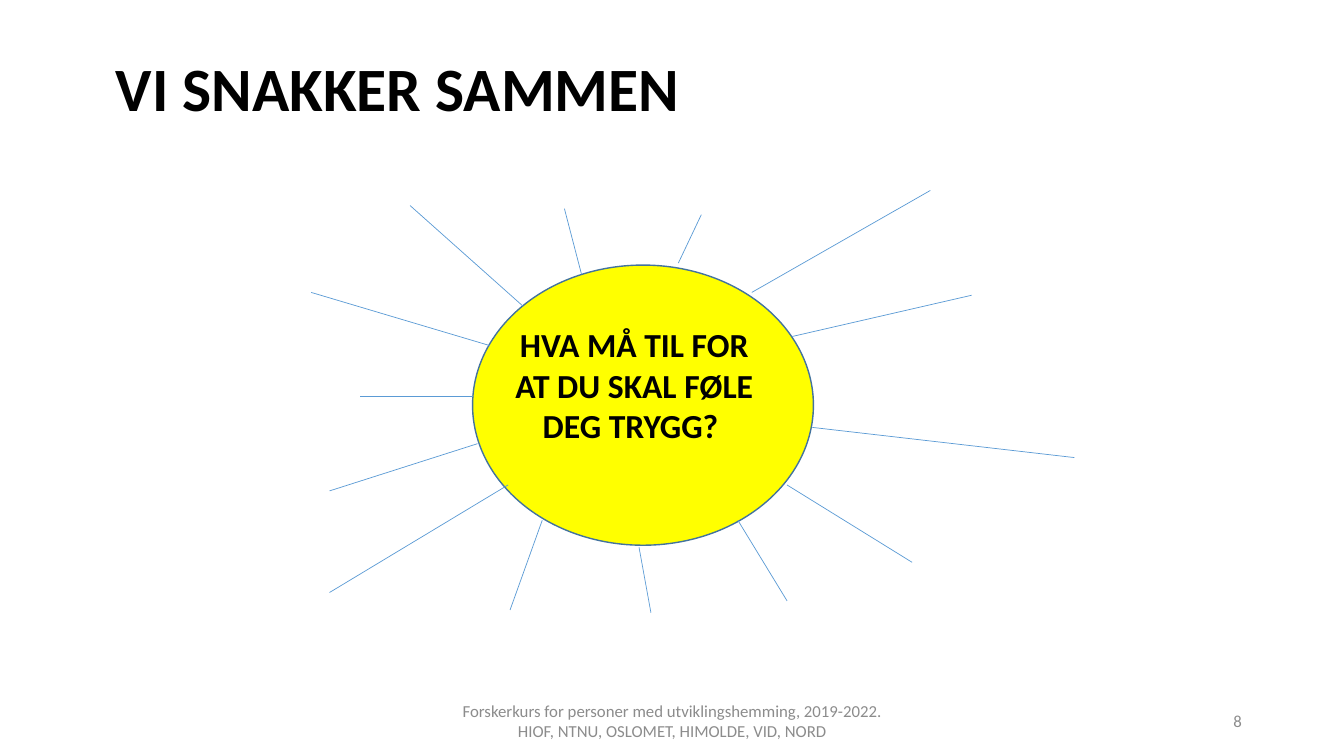
import pptx
import pptx.dml.color
import pptx.enum.shapes
import pptx.enum.text
import pptx.oxml.ns
import pptx.util
from lxml import etree
from pptx.util import Cm

ALIGN = pptx.enum.text.PP_ALIGN
ANCHOR = pptx.enum.text.MSO_ANCHOR
COLORS = {
    "text": "000000",
    "footer": "8C8C8C",
    "sun": "FFFF00",
    "sun_edge": "43739E",
    "ray": "5B9BD5",
}

# Inner and outer end of each ray, in cm from the centre of the sun, clockwise
RAYS = [
    ((0.89, -3.58), (1.47, -4.8)),
    ((2.74, -2.84), (7.24, -5.41)),
    ((3.76, -1.73), (8.28, -2.77)),
    ((4.27, 0.56), (10.87, 1.32)),
    ((3.63, 2.01), (6.78, 3.96)),
    ((2.39, 2.9), (3.63, 4.93)),
    ((-0.1, 3.58), (0.2, 5.23)),
    ((-2.54, 2.9), (-3.35, 5.16)),
    ((-3.4, 2.01), (-7.9, 4.72)),
    ((-4.17, 0.97), (-7.9, 2.16)),
    ((-4.29, -0.23), (-7.14, -0.23)),
    ((-3.86, -1.5), (-8.36, -2.84)),
    ((-3.02, -2.49), (-5.87, -5.03)),
    ((-1.55, -3.3), (-1.98, -4.95)),
]


def rgb(name):
    return pptx.dml.color.RGBColor.from_string(COLORS[name])


def add_text(slide, box, text, size, color="text", bold=False,
             align=ALIGN.LEFT, anchor=ANCHOR.TOP):
    frame = slide.shapes.add_textbox(*map(Cm, box)).text_frame
    frame.word_wrap = True
    frame.vertical_anchor = anchor
    paragraph = frame.paragraphs[0]
    paragraph.text = text
    paragraph.alignment = align
    paragraph.font.name = "Calibri"
    paragraph.font.size = pptx.util.Pt(size)
    paragraph.font.bold = bold
    paragraph.font.color.rgb = rgb(color)


def add_ray(slide, center, inner, outer):
    ends = [Cm(c + offset) for end in (inner, outer)
            for c, offset in zip(center, end)]
    ray = slide.shapes.add_connector(
        pptx.enum.shapes.MSO_CONNECTOR.STRAIGHT, *ends)
    ray.line.color.rgb = rgb("ray")
    ray.line.width = pptx.util.Pt(0.5)
    properties = ray._element.spPr
    etree.SubElement(properties, pptx.oxml.ns.qn("a:effectLst"))


def add_sun(slide, box):
    """Draw the sun in the box, its rays around it and the question on it."""
    left, top, width, height = box
    sun = slide.shapes.add_shape(
        pptx.enum.shapes.MSO_SHAPE.OVAL, *map(Cm, box))
    sun.shadow.inherit = False
    sun.fill.solid()
    sun.fill.fore_color.rgb = rgb("sun")
    sun.line.color.rgb = rgb("sun_edge")
    sun.line.width = pptx.util.Pt(1)

    center = (left + width / 2, top + height / 2)
    for inner, outer in RAYS:
        add_ray(slide, center, inner, outer)

    add_text(slide, (left + 0.81, top + 1.37, 6.53, 3.33),
             "HVA MÅ TIL FOR AT DU SKAL FØLE DEG TRYGG? ",
             24, bold=True, align=ALIGN.CENTER)


def add_footer(slide, box):
    """Place the centred course line and the page number at the right edge."""
    left, top, width, height = box
    course_width, page_width = 11.43, 7.62
    add_text(slide, (left, top, course_width, height),
             "Forskerkurs for personer med utviklingshemming, 2019-2022.\v"
             "HIOF, NTNU, OSLOMET, HIMOLDE, VID, NORD",
             12, "footer", align=ALIGN.CENTER, anchor=ANCHOR.MIDDLE)
    add_text(slide, (left + width - page_width, top, page_width, height),
             "8", 12, "footer", align=ALIGN.RIGHT, anchor=ANCHOR.MIDDLE)


def main():
    deck = pptx.Presentation()
    deck.slide_width, deck.slide_height = Cm(33.87), Cm(19.05)
    slide = deck.slides.add_slide(deck.slide_layouts[6])
    add_sun(slide, (11.91, 6.68, 8.59, 7.06))
    add_footer(slide, (11.23, 17.65, 20.32, 1.02))
    add_text(slide, (2.67, 1.14, 17.3, 2.13), "VI SNAKKER SAMMEN", 44, bold=True)
    deck.save("out.pptx")


if __name__ == "__main__":
    main()
